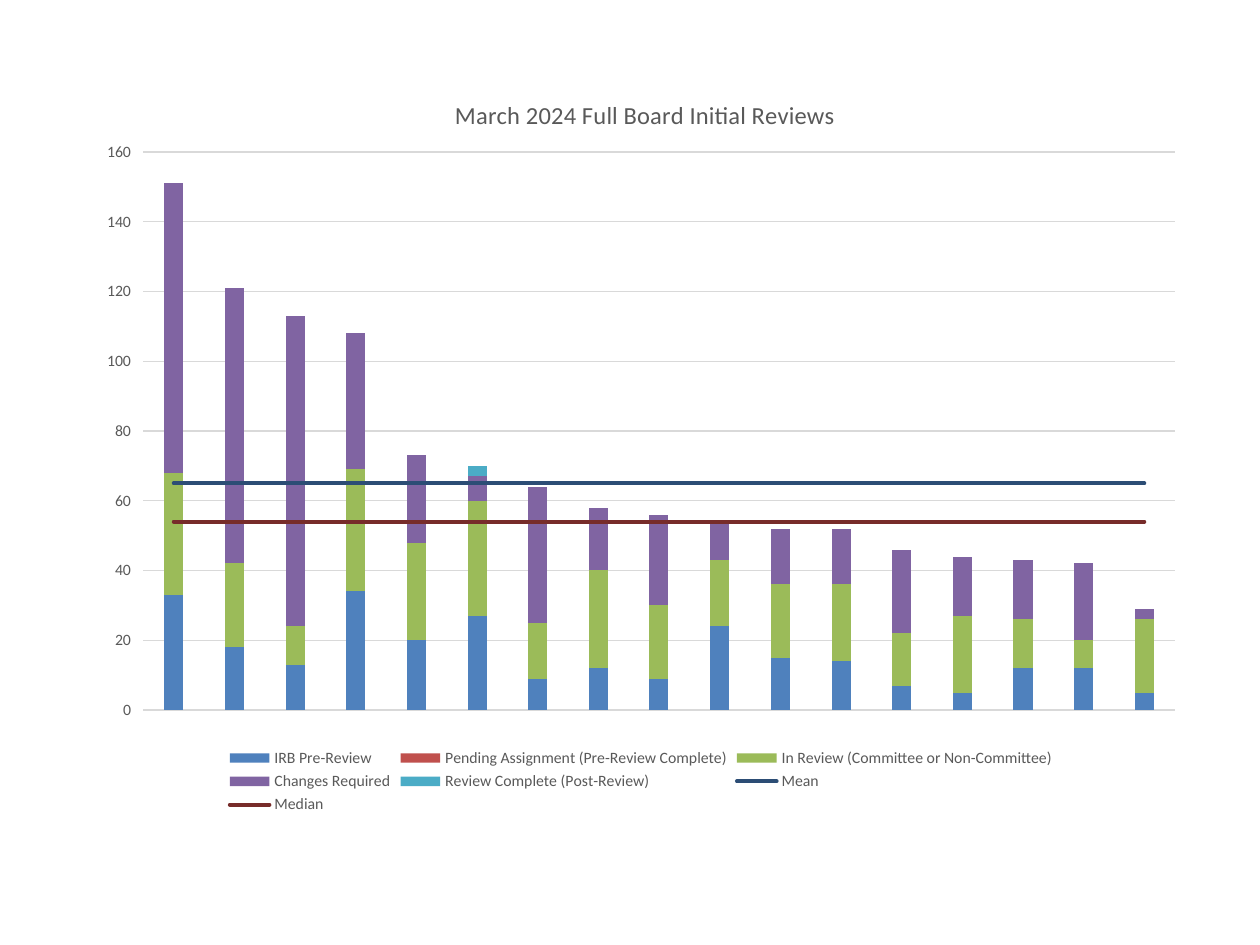
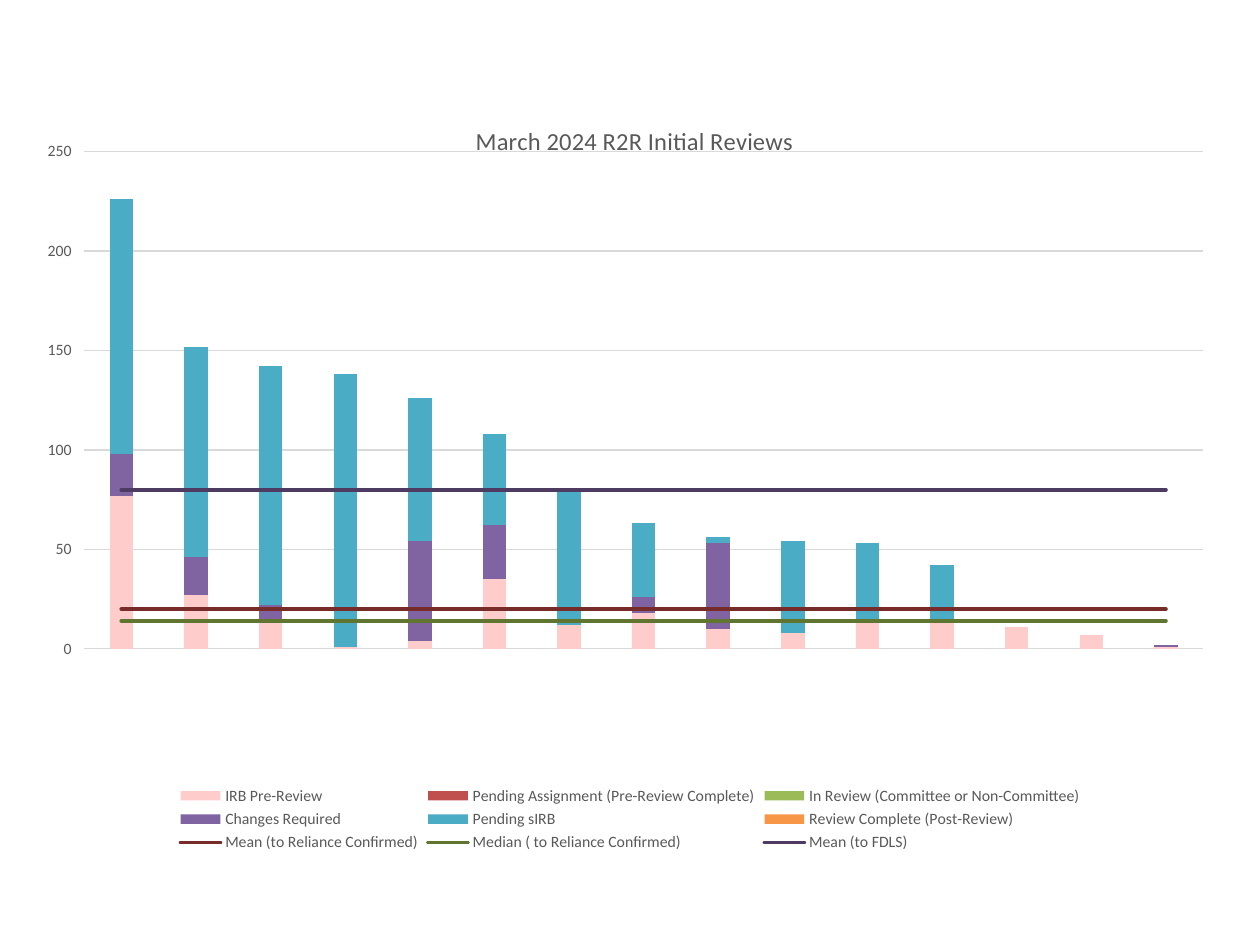
"""Build two slides of stacked review-time charts with mean and median lines."""
import lxml.etree
import pptx
import pptx.chart.data
import pptx.dml.color
import pptx.enum.chart
import pptx.oxml
import pptx.oxml.ns
import pptx.util

Pt = pptx.util.Pt
qn = pptx.oxml.ns.qn


class Theme:
    font = "Calibri"
    text = "595959"
    grid = "D9D9D9"
    blue, red, green = "4F81BD", "C0504D", "9BBB59"
    purple, teal, orange, pink = "8064A2", "4BACC6", "F79646", "FFCCCC"
    dark_blue, dark_red, dark_green, dark_purple = "2C4D75", "772C2A", "5F7530", "4D3B62"
    title_size = Pt(14)
    label_size = Pt(9)
    grid_width = Pt(0.75)
    line_width = Pt(2.25)


def apply_format(target, color, **values):
    """Set a colour and the given attributes on a font or a line."""
    for name, value in values.items():
        setattr(target, name, value)
    color_format = target.color
    color_format.rgb = pptx.dml.color.RGBColor.from_string(color)


def set_layout(parent, index, fractions):
    """Place a chart part by fractions of the chart area."""
    for old_layout in parent.findall(qn("c:layout")):
        parent.remove(old_layout)
    layout = lxml.etree.Element(qn("c:layout"))
    manual = lxml.etree.SubElement(layout, qn("c:manualLayout"))
    for name, value in fractions.items():
        lxml.etree.SubElement(manual, qn("c:" + name)).set("val", str(value))
    parent.insert(index, layout)


PRE_REVIEW = "IRB Pre-Review"
PENDING = "Pending Assignment (Pre-Review Complete)"
IN_REVIEW = "In Review (Committee or Non-Committee)"
CHANGES = "Changes Required"
COMPLETE = "Review Complete (Post-Review)"

review_charts = [
    {
        "title": "March 2024 Full Board Initial Reviews",
        "frame": (48.24, 36, 635.76, 432),
        "title_place": (0.329, 0.04),
        "plot_place": (0.053, 0.118, 0.927, 0.738),
        "scale": (160, 20),
        "count": 17,
        "stages": [
            (PRE_REVIEW, Theme.blue,
             [33, 18, 13, 34, 20, 27, 9, 12, 9, 24, 15, 14, 7, 5, 12, 12, 5]),
            (PENDING, Theme.red, [0] * 17),
            (IN_REVIEW, Theme.green,
             [35, 24, 11, 35, 28, 33, 16, 28, 21, 19, 21, 22, 15, 22, 14, 8, 21]),
            (CHANGES, Theme.purple,
             [83, 79, 89, 39, 25, 7, 39, 18, 26, 11, 16, 16, 24, 17, 17, 22, 3]),
            (COMPLETE, Theme.teal, [0] * 5 + [3] + [0] * 11),
        ],
        "levels": [("Mean", Theme.dark_blue, 65), ("Median", Theme.dark_red, 54)],
    },
    {
        "title": "March 2024 R2R Initial Reviews",
        "frame": (18.72, 49.68, 682.56, 439.92),
        "title_place": (0.367, 0.042),
        "plot_place": (0.043, 0.084, 0.937, 0.646),
        "scale": (250, 50),
        "count": 15,
        "stages": [
            (PRE_REVIEW, Theme.pink,
             [77, 27, 15, 1, 4, 35, 12, 18, 10, 8, 15, 14, 11, 7, 1]),
            (PENDING, Theme.red, [0] * 15),
            (IN_REVIEW, Theme.green, [0] * 15),
            (CHANGES, Theme.purple,
             [21, 19, 7, 0, 50, 27, 0, 8, 43, 0, 0, 0, 0, 0, 1]),
            ("Pending sIRB", Theme.teal,
             [128, 106, 120, 137, 72, 46, 69, 37, 3, 46, 38, 28, 0, 0, 0]),
            (COMPLETE, Theme.orange, [0] * 15),
        ],
        "levels": [
            ("Mean (to Reliance Confirmed)", Theme.dark_red, 20),
            ("Median ( to Reliance Confirmed)", Theme.dark_green, 14),
            ("Mean (to FDLS)", Theme.dark_purple, 80),
        ],
    },
]

presentation = pptx.Presentation()
presentation.slide_width, presentation.slide_height = Pt(720), Pt(540)
blank_layout = presentation.slide_layouts[6]

for review in review_charts:
    slide = presentation.slides.add_slide(blank_layout)
    stages, levels, count = review["stages"], review["levels"], review["count"]

    chart_data = pptx.chart.data.CategoryChartData()
    chart_data.categories = [str(number) for number in range(1, count + 1)]
    for name, color, values in stages:
        chart_data.add_series(name, values)
    for name, color, level in levels:
        chart_data.add_series(name, [level] * count)
    chart = slide.shapes.add_chart(
        pptx.enum.chart.XL_CHART_TYPE.COLUMN_STACKED,
        *[Pt(length) for length in review["frame"]], chart_data).chart
    chart.font.name = Theme.font
    chart.font.size = Pt(10)

    columns = chart.plots[0]
    for name, value in {"gap_width": 219, "overlap": 100, "vary_by_categories": False}.items():
        setattr(columns, name, value)
    for series, (name, color, values) in zip(columns.series, stages):
        series.format.fill.solid()
        series.format.fill.fore_color.rgb = pptx.dml.color.RGBColor.from_string(color)

    bar_chart = chart.element.find(".//" + qn("c:barChart"))
    line_chart = pptx.oxml.parse_xml(
        '<c:lineChart xmlns:c="http://schemas.openxmlformats.org/drawingml/2006/chart">'
        '<c:grouping val="standard"/><c:varyColors val="0"/></c:lineChart>')
    for series_element in bar_chart.findall(qn("c:ser"))[len(stages):]:
        for invert in series_element.findall(qn("c:invertIfNegative")):
            series_element.remove(invert)
        line_chart.append(series_element)
    lxml.etree.SubElement(line_chart, qn("c:marker")).set("val", "1")
    for axis_id in bar_chart.findall(qn("c:axId")):
        lxml.etree.SubElement(line_chart, qn("c:axId")).set("val", axis_id.get("val"))
    bar_chart.addnext(line_chart)

    for series, (name, color, level) in zip(chart.plots[1].series, levels):
        series.smooth = False
        series.marker.style = pptx.enum.chart.XL_MARKER_STYLE.NONE
        apply_format(series.format.line, color, width=Theme.line_width)
    for line in line_chart.iter(qn("a:ln")):
        if line.find(qn("a:solidFill")) is not None:
            line.set("cap", "rnd")

    chart.category_axis.visible = False
    value_axis = chart.value_axis
    maximum, step = review["scale"]
    axis_format = {
        "minimum_scale": 0, "maximum_scale": maximum, "major_unit": step,
        "has_major_gridlines": True,
        "major_tick_mark": pptx.enum.chart.XL_TICK_MARK.OUTSIDE,
    }
    for name, value in axis_format.items():
        setattr(value_axis, name, value)
    value_axis.format.line.fill.background()
    apply_format(value_axis.major_gridlines.format.line, Theme.grid, width=Theme.grid_width)

    chart.has_legend = True
    chart.legend.position = pptx.enum.chart.XL_LEGEND_POSITION.BOTTOM
    chart.legend.include_in_layout = False
    for font in (value_axis.tick_labels.font, chart.legend.font):
        font.fill.solid()
        apply_format(font, Theme.text, name=Theme.font, size=Theme.label_size)

    chart.has_title = True
    title_frame = chart.chart_title.text_frame
    title_frame.text = review["title"]
    title_font = title_frame.paragraphs[0].runs[0].font
    apply_format(title_font, Theme.text, name=Theme.font, size=Theme.title_size, bold=False)

    modes = {"xMode": "edge", "yMode": "edge"}
    title_element = chart.element.find(".//" + qn("c:title"))
    set_layout(title_element, 1, modes | dict(zip("xy", review["title_place"])))
    set_layout(bar_chart.getparent(), 0,
               {"layoutTarget": "inner"} | modes | dict(zip("xywh", review["plot_place"])))

presentation.save("out.pptx")
